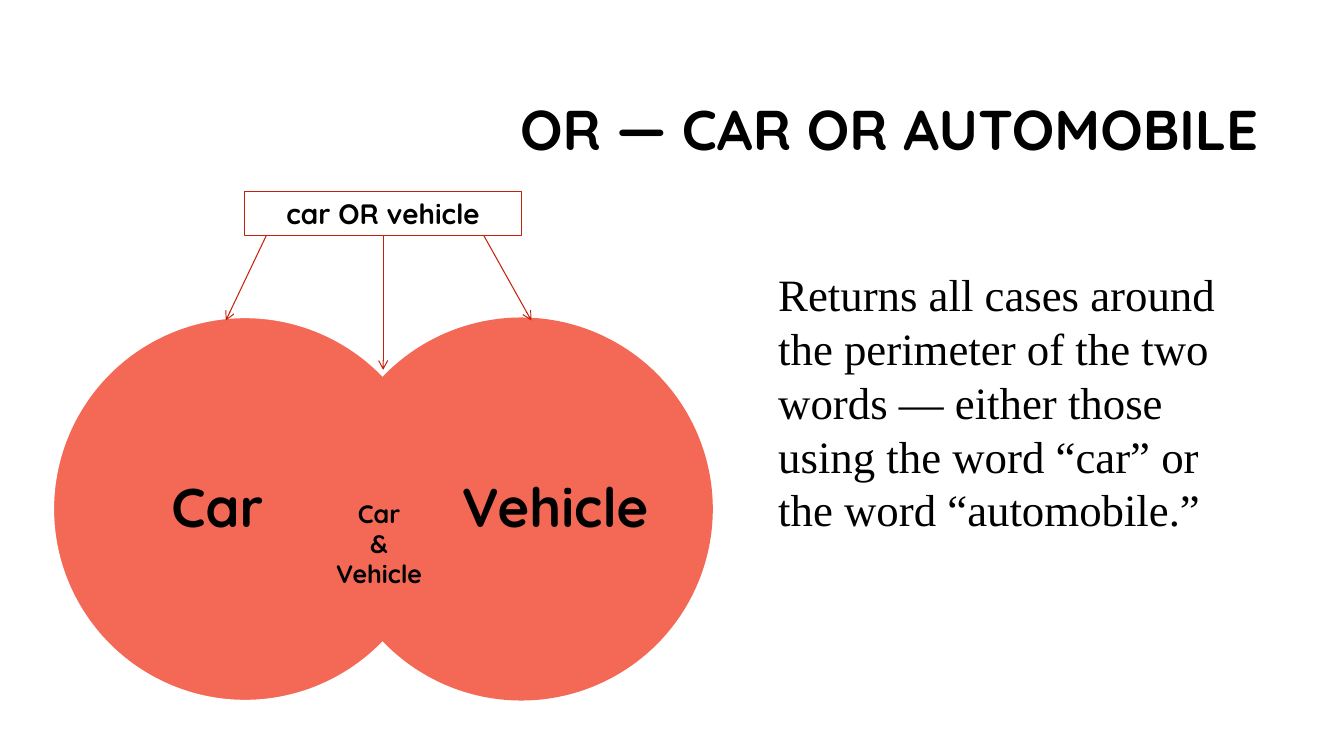
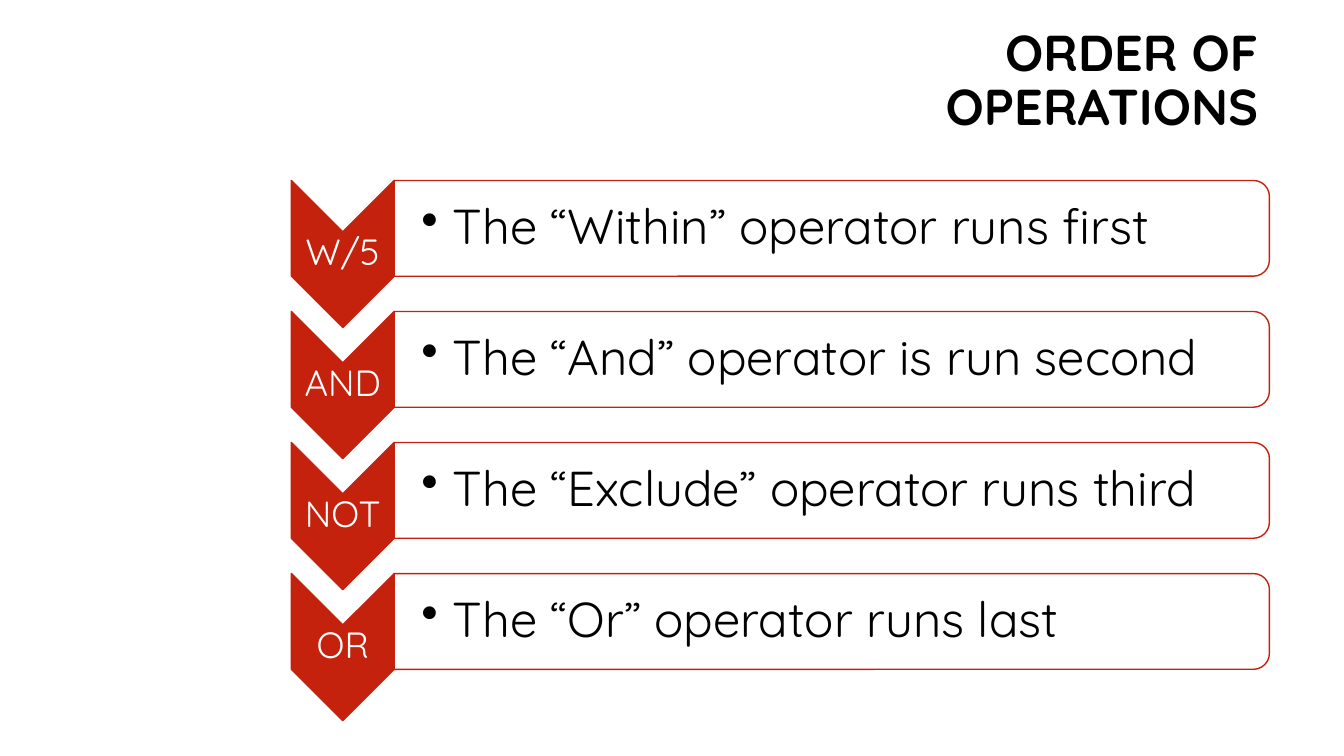
from pptx import Presentation
from pptx.dml.color import RGBColor
from pptx.enum.shapes import MSO_CONNECTOR, MSO_SHAPE
from pptx.enum.text import MSO_ANCHOR, MSO_AUTO_SIZE, PP_ALIGN
from pptx.oxml.ns import qn
from pptx.oxml.xmlchemy import OxmlElement
from pptx.util import Inches, Pt

BLACK = "000000"
WHITE = "FFFFFF"
RED = "C4220D"
CORAL = "F46856"
SANS = "Quicksand"
SERIF = "Times New Roman"
TITLE_ONLY = 5

BAR_LEFT, BAR_WIDTH, BAR_HEIGHT = 3.91, 8.68, 0.95
CHEVRON_LENGTH, CHEVRON_WIDTH = 1.46, 1.02
FIRST_ROW_TOP, ROW_PITCH = 1.79, 1.3
OPERATORS = [
    ("W/5", "The “Within” operator runs first"),
    ("AND", "The “And” operator is run second"),
    ("NOT", "The “Exclude” operator runs third"),
    ("OR", "The “Or” operator runs last"),
]


def color(hex_string):
    return RGBColor.from_string(hex_string)


def set_text(shape, lines, size, font=SANS, text_color=BLACK, bold=False,
             align=PP_ALIGN.CENTER, anchor=MSO_ANCHOR.TOP, insets=None,
             spacing=None, bullet_indent=None):
    frame = shape.text_frame
    frame.word_wrap = True
    frame.auto_size = MSO_AUTO_SIZE.NONE
    frame.vertical_anchor = anchor
    if insets is not None:
        left, other = insets
        frame.margin_left = Inches(left)
        frame.margin_top = frame.margin_right = frame.margin_bottom = Inches(other)
    frame.text = "\n".join(lines)
    for paragraph in frame.paragraphs:
        paragraph.alignment = align
        if spacing is not None:
            paragraph.line_spacing = spacing
        if bullet_indent is not None:
            add_bullet(paragraph, bullet_indent)
        paragraph.font.name = font
        paragraph.font.size = Pt(size)
        paragraph.font.bold = bold
        paragraph.font.color.rgb = color(text_color)


def add_bullet(paragraph, indent):
    properties = paragraph._p.get_or_add_pPr()
    properties.set("marL", str(Inches(indent)))
    properties.set("indent", str(-Inches(indent)))
    bullet = OxmlElement("a:buChar")
    bullet.set("char", "•")
    properties.append(bullet)


def add_title_slide(presentation, title, box, size):
    slide = presentation.slides.add_slide(presentation.slide_layouts[TITLE_ONLY])
    shape = slide.shapes.title
    shape.left, shape.top, shape.width, shape.height = map(Inches, box)
    set_text(shape, [title], size, bold=True, align=PP_ALIGN.RIGHT,
             anchor=MSO_ANCHOR.MIDDLE, spacing=0.9)
    return slide


def add_text(slide, box, lines, size, **style):
    set_text(slide.shapes.add_textbox(*map(Inches, box)), lines, size, **style)


def add_shape(slide, kind, box, fill=None, line=None, line_width=1, rotation=0):
    shape = slide.shapes.add_shape(kind, *map(Inches, box))
    shape.shadow.inherit = False
    shape.rotation = rotation
    if fill:
        shape.fill.solid()
        shape.fill.fore_color.rgb = color(fill)
    else:
        shape.fill.background()
    if line:
        shape.line.color.rgb = color(line)
        shape.line.width = Pt(line_width)
    else:
        shape.line.fill.background()
    return shape


def add_arrow(slide, start, end):
    arrow = slide.shapes.add_connector(
        MSO_CONNECTOR.STRAIGHT, *map(Inches, start + end))
    arrow.line.color.rgb = color(RED)
    arrow.line.width = Pt(0.75)
    properties = arrow.element.spPr
    head = OxmlElement("a:tailEnd")
    head.set("type", "arrow")
    properties.find(qn("a:ln")).append(head)
    properties.append(OxmlElement("a:effectLst"))
    return arrow


def add_upright(slide, kind, center_x, center_y, length, thickness, fill):
    box = (center_x - length / 2, center_y - thickness / 2, length, thickness)
    return add_shape(slide, kind, box, fill, RED, rotation=90)


def add_operator_row(slide, top, label, description):
    chevron_x = BAR_LEFT - CHEVRON_WIDTH / 2
    add_upright(slide, MSO_SHAPE.CHEVRON, chevron_x, top + CHEVRON_LENGTH / 2,
                CHEVRON_LENGTH, CHEVRON_WIDTH, RED)
    add_text(slide, (BAR_LEFT - CHEVRON_WIDTH, top + 0.51, CHEVRON_WIDTH, 0.44),
             [label], 26, text_color=WHITE, anchor=MSO_ANCHOR.MIDDLE,
             insets=(0.02, 0.02), spacing=0.9)
    add_upright(slide, MSO_SHAPE.ROUND_2_SAME_RECTANGLE, BAR_LEFT + BAR_WIDTH / 2,
                top + BAR_HEIGHT / 2, BAR_HEIGHT, BAR_WIDTH, WHITE)
    add_text(slide, (BAR_LEFT, top + 0.05, BAR_WIDTH - 0.05, BAR_HEIGHT - 0.1),
             [description], 35, align=PP_ALIGN.LEFT, anchor=MSO_ANCHOR.MIDDLE,
             insets=(0.27, 0.02), spacing=0.9, bullet_indent=0.31)


def build_or_slide(presentation):
    slide = add_title_slide(presentation, "OR — CAR OR AUTOMOBILE",
                            (4.8, 0.84, 7.78, 0.95), 40)
    add_text(slide, (7.62, 2.6, 4.97, 2.79),
             ["Returns all cases around the perimeter of the two words — either "
              "those using the word “car” or the word “automobile.”"],
             32, font=SERIF, align=PP_ALIGN.LEFT)
    for circle_left, line, label_left, label in [
        (0.53, WHITE, 1.06, "Car"),
        (3.27, None, 4.41, "Vehicle"),
    ]:
        add_shape(slide, MSO_SHAPE.OVAL, (circle_left, 3.15, 3.8, 3.8), CORAL, line)
        add_text(slide, (label_left, 3.6, 2.19, 2.91), [label], 39, bold=True,
                 anchor=MSO_ANCHOR.MIDDLE, insets=(0, 0), spacing=0.9)
    add_text(slide, (3.17, 4.89, 1.18, 1.01), ["Car", "&", "Vehicle"], 18, bold=True)

    query = add_shape(slide, MSO_SHAPE.RECTANGLE, (2.43, 1.9, 2.74, 0.44),
                      line=RED, line_width=0.75)
    set_text(query, ["car OR vehicle"], 20, bold=True)
    add_arrow(slide, (2.64, 2.34), (2.24, 3.18))
    add_arrow(slide, (4.8, 2.34), (5.27, 3.18))
    add_arrow(slide, (3.8, 2.34), (3.8, 3.67)).begin_connect(query, 2)


def build_order_slide(presentation):
    slide = add_title_slide(presentation, "ORDER OF OPERATIONS",
                            (6.67, 0.5, 5.91, 0.63), 36)
    for index, (label, description) in enumerate(OPERATORS):
        add_operator_row(slide, FIRST_ROW_TOP + index * ROW_PITCH, label, description)


def main():
    presentation = Presentation()
    presentation.slide_width = Inches(13.33)
    presentation.slide_height = Inches(7.5)
    build_or_slide(presentation)
    build_order_slide(presentation)
    presentation.save("out.pptx")


if __name__ == "__main__":
    main()
